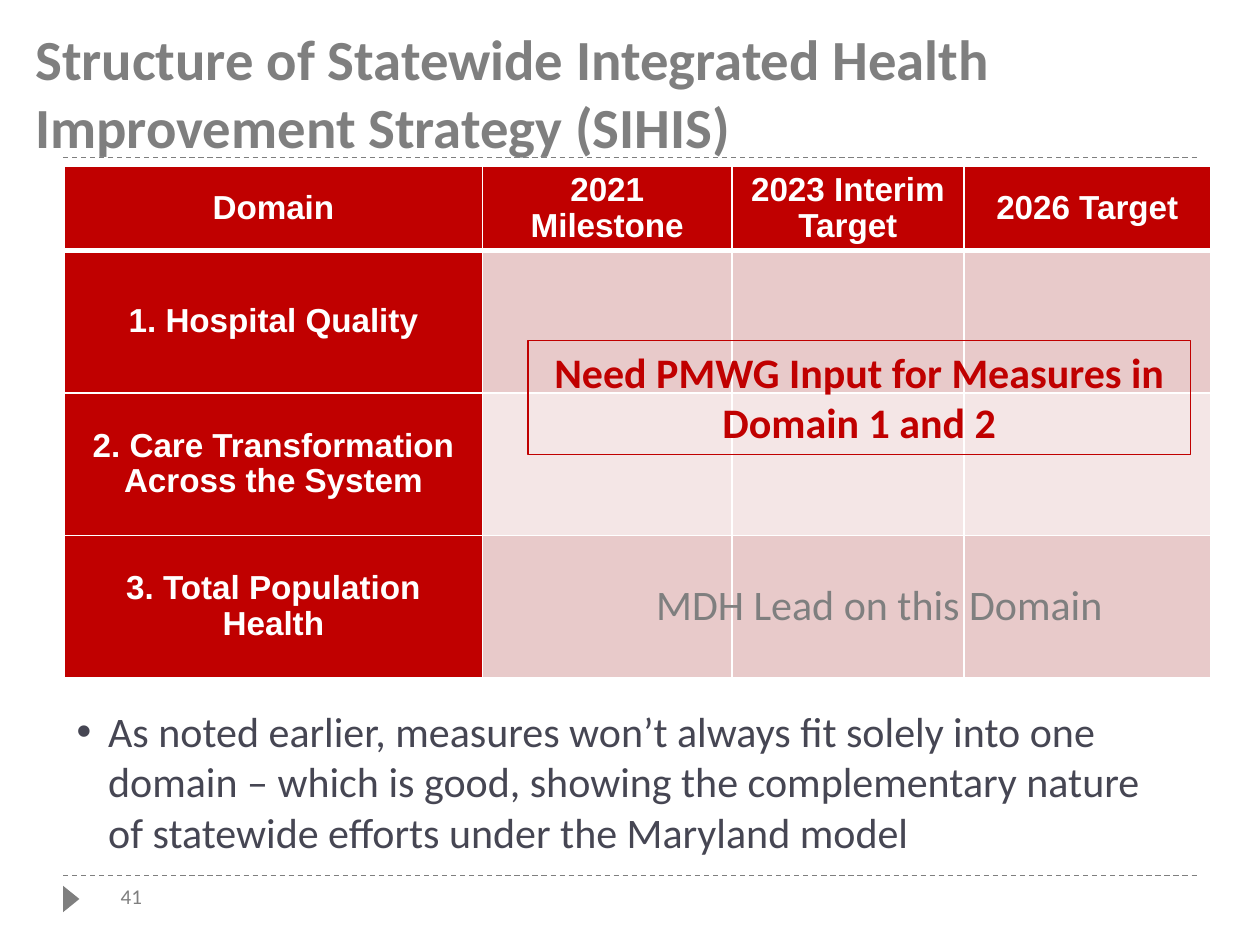
"""Build the slide on the structure of the health improvement strategy."""
from lxml.etree import SubElement
from pptx import Presentation
from pptx.dml.color import RGBColor
from pptx.enum.dml import MSO_LINE
from pptx.enum.shapes import MSO_CONNECTOR, MSO_SHAPE
from pptx.enum.text import MSO_ANCHOR as Anchor, MSO_AUTO_SIZE, PP_ALIGN as Align
from pptx.oxml.ns import qn
from pptx.util import Pt

PX = 9144
COLORS = {
    "gray": "7F7F7F",
    "red": "C00000",
    "white": "FFFFFF",
    "slate": "464653",
    "dark_band": "E8CACA",
    "light_band": "F4E6E6",
}


def rgb(name):
    return RGBColor.from_string(COLORS[name])


def write(frame, text, size, color, bold=False, align=Align.LEFT, anchor=Anchor.TOP, font="Calibri"):
    frame.word_wrap = True
    frame.auto_size = MSO_AUTO_SIZE.NONE
    frame.vertical_anchor = anchor
    paragraph = frame.paragraphs[0]
    paragraph.text = text
    paragraph.alignment = align
    paragraph.font.name = font
    paragraph.font.size = Pt(size)
    paragraph.font.bold = bold
    paragraph.font.color.rgb = rgb(color)
    return paragraph


presentation = Presentation()
presentation.slide_width, presentation.slide_height = 1000 * PX, 750 * PX
slide = presentation.slides.add_slide(presentation.slide_layouts[5])
shapes = slide.shapes

title = shapes.title
title.left, title.top, title.width, title.height = 18 * PX, 19 * PX, 883 * PX, 113 * PX
write(title.text_frame, "Structure of Statewide Integrated Health Improvement Strategy (SIHIS)",
      32.4, "gray", bold=True, anchor=Anchor.BOTTOM)

for y in (125, 695):
    rule = shapes.add_connector(MSO_CONNECTOR.STRAIGHT, 50 * PX, y * PX, 950 * PX, y * PX)
    rule.line.color.rgb = rgb("gray")
    rule.line.width = Pt(0.75)
    rule.line.dash_style = MSO_LINE.DASH
    SubElement(rule._element.spPr, qn("a:effectLst"))

marker = shapes.add_shape(MSO_SHAPE.ISOSCELES_TRIANGLE, 46 * PX, 707 * PX, 21 * PX, 13 * PX)
marker.rotation = 90
marker.shadow.inherit = False
marker.fill.solid()
marker.fill.fore_color.rgb = rgb("gray")
marker.line.fill.background()

headers = ["Domain", "2021 Milestone", "2023 Interim Target", "2026 Target"]
domains = ["1. Hospital Quality", "2. Care Transformation Across the System", "3. Total Population Health"]
rows = [headers] + [[domain, "", "", ""] for domain in domains]
column_widths = [332, 198, 184, 196]
row_heights = [66, 113, 113, 113]

table = shapes.add_table(len(rows), len(headers), 51 * PX, 132 * PX,
                         sum(column_widths) * PX, sum(row_heights) * PX).table
for column, width in zip(table.columns, column_widths):
    column.width = width * PX
for row, height in zip(table.rows, row_heights):
    row.height = height * PX

for row_index, row in enumerate(rows):
    for column_index, text in enumerate(row):
        cell = table.cell(row_index, column_index)
        cell.vertical_anchor = Anchor.MIDDLE
        if text:
            paragraph = cell.text_frame.paragraphs[0]
            paragraph.text = text
            paragraph.alignment = Align.CENTER
            paragraph.line_spacing = 0.97
            paragraph.font.name = "Arial"
            paragraph.font.size = Pt(19)
            paragraph.font.bold = True
            paragraph.font.color.rgb = rgb("white")
        properties = cell._tc.get_or_add_tcPr()
        for side in ("L", "R", "T", "B"):
            header_edge = (row_index, side) in ((0, "B"), (1, "T"))
            border = SubElement(properties, qn(f"a:ln{side}"), w=str(Pt(3 if header_edge else 1)))
            border_fill = SubElement(border, qn("a:solidFill"))
            SubElement(border_fill, qn("a:srgbClr"), val=COLORS["white"])
        band = "dark_band" if row_index % 2 else "light_band"
        cell.fill.solid()
        cell.fill.fore_color.rgb = rgb("red" if text else band)

number_box = shapes.add_textbox(86 * PX, 696 * PX, 41 * PX, 30 * PX)
write(number_box.text_frame, "41", 12, "gray")

note_box = shapes.add_textbox(51 * PX, 555 * PX, 881 * PX, 153 * PX)
note = write(note_box.text_frame,
             "As noted earlier, measures won’t always fit solely into one domain – which is good, "
             "showing the complementary nature of statewide efforts under the Maryland model",
             24, "slate")
note_properties = note._p.get_or_add_pPr()
note_properties.set("marL", str(25 * PX))
note_properties.set("indent", str(-25 * PX))
bullet_font = SubElement(note_properties, qn("a:buFont"), typeface="Arial")
bullet = SubElement(note_properties, qn("a:buChar"), char="•")
note_properties.insert(0, bullet_font)
note_properties.insert(1, bullet)

lead_box = shapes.add_textbox(511 * PX, 454 * PX, 390 * PX, 50 * PX)
write(lead_box.text_frame, "MDH Lead on this Domain", 24, "gray")

callout = shapes.add_shape(MSO_SHAPE.RECTANGLE, 419 * PX, 270 * PX, 526 * PX, 91 * PX)
callout.shadow.inherit = False
callout.fill.background()
callout.line.color.rgb = rgb("red")
callout.line.width = Pt(0.75)
write(callout.text_frame, "Need PMWG Input for Measures in Domain 1 and 2", 24, "red",
      bold=True, align=Align.CENTER)

presentation.save("out.pptx")
